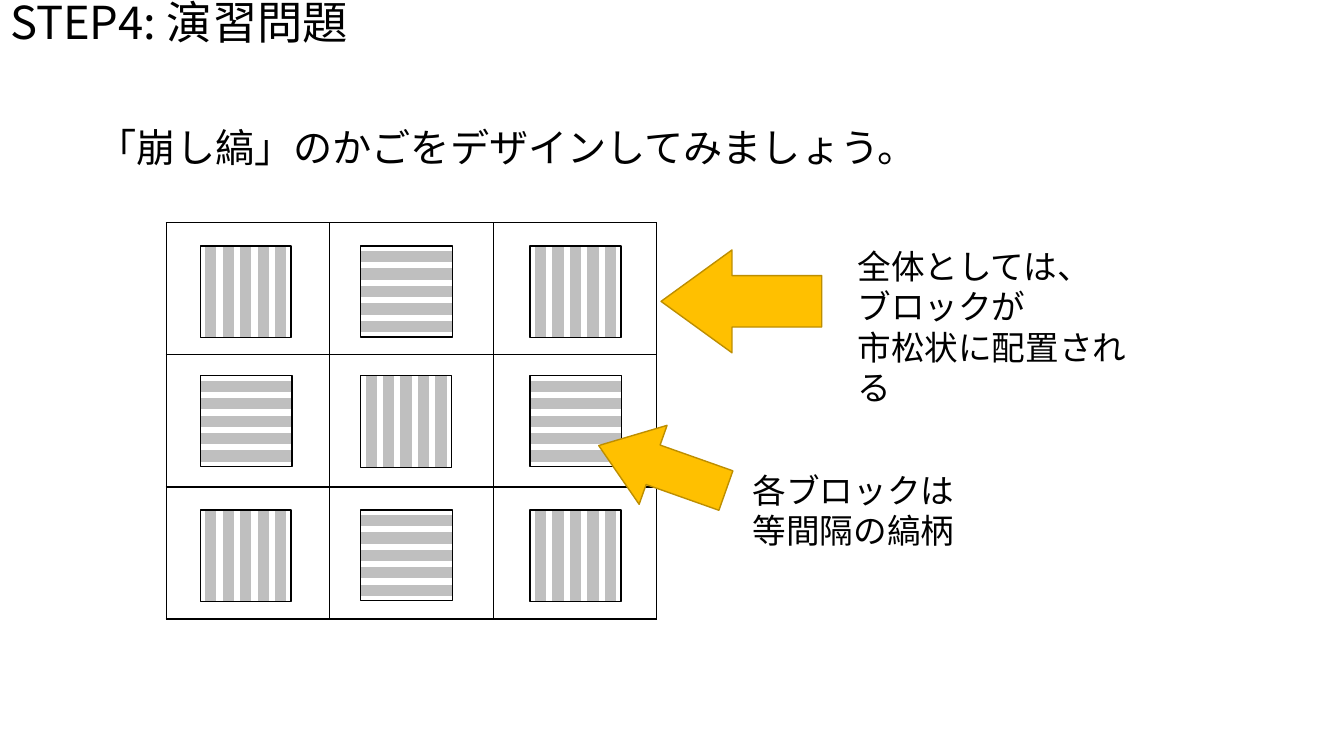
from dataclasses import dataclass

from lxml import etree
from pptx import Presentation
from pptx import util as u
from pptx.dml import color
from pptx.enum import shapes, text
from pptx.oxml import ns


@dataclass(frozen=True)
class Theme:
    black: str = "000000"
    gray: str = "BFBFBF"
    gold: str = "FFC000"
    edge: str = "BD8E00"
    latin: str = "Calibri"
    asian: str = "Noto Sans CJK JP"
    title: float = 32.4
    lead: float = 28
    note: float = 24
    line: float = 1


@dataclass(frozen=True)
class Box:
    left: float
    top: float
    width: float
    height: float
    turn: float = 0


@dataclass(frozen=True)
class Note:
    box: Box
    words: str
    arrow: Box


THEME = Theme()
GRID = Box(4.19, 5.61, 12.36, 9.99)
LEFTS = (5.05, 9.09, 13.36)
TOPS = (6.2, 9.47, 12.85)
WIDE, TALL = 2.29, 2.31
COUNT, PITCH, BAR, INSET = 5, 0.44, 0.25, 0.14
NOTES = (
    Note(Box(21.36, 6.07, 7.85, 3.33), "全体としては、\nブロックが\n市松状に配置される",
         Box(16.66, 6.3, 4.05, 2.59)),
    Note(Box(18.72, 11.71, 5.65, 2.31), "各ブロックは\n等間隔の縞柄",
         Box(14.99, 10.74, 3.4, 2.11, 19.5)),
)


def rgb(code: str) -> color.RGBColor:
    return color.RGBColor.from_string(code)


def place(item, box: Box) -> None:
    item.left, item.top = u.Cm(box.left), u.Cm(box.top)
    item.width, item.height = u.Cm(box.width), u.Cm(box.height)


def write(frame, words: str, size: float, face: str) -> None:
    frame.text = words
    frame.word_wrap = True
    frame.auto_size = text.MSO_AUTO_SIZE.NONE
    for para in frame.paragraphs:
        para.alignment = text.PP_ALIGN.LEFT
        for run in para.runs:
            run.font.size = u.Pt(size)
            run.font.name = face
            run.font.color.rgb = rgb(THEME.black)
            east = etree.SubElement(run.font._element, ns.qn("a:ea"))
            east.set("typeface", THEME.asian)


def draw(slide, kind, box: Box, fill: str | None, line: str):
    item = slide.shapes.add_shape(kind, 0, 0, 0, 0)
    place(item, box)
    item.rotation = box.turn
    item.shadow.inherit = False
    if fill:
        item.fill.solid()
        item.fill.fore_color.rgb = rgb(fill)
    else:
        item.fill.background()
    item.line.color.rgb = rgb(line)
    item.line.width = u.Pt(THEME.line)
    return item


def edge(cell) -> None:
    cell.fill.background()
    props = cell._tc.get_or_add_tcPr()
    for spot, side in enumerate(("L", "R", "T", "B")):
        line = etree.Element(ns.qn(f"a:ln{side}"), w=str(u.Pt(THEME.line)))
        fill = etree.SubElement(line, ns.qn("a:solidFill"))
        etree.SubElement(fill, ns.qn("a:srgbClr"), val=THEME.black)
        props.insert(spot, line)


def block(slide, left: float, top: float, flat: bool) -> None:
    def rect(x: float, y: float, width: float, fill: str | None, line: str) -> None:
        box = Box(x - width / 2, y - TALL / 2, width, TALL, 90 if flat else 0)
        draw(slide, shapes.MSO_SHAPE.RECTANGLE, box, fill, line)

    def spot(step: float) -> tuple[float, float]:
        half = TALL / 2
        return (left + half, top + step) if flat else (left + step, top + half)

    for i in range(COUNT):
        rect(*spot(INSET + BAR / 2 + i * PITCH), BAR, THEME.gray, THEME.gray)
    rect(*spot(WIDE / 2), WIDE, None, THEME.black)


def main() -> None:
    deck = Presentation()
    deck.slide_width, deck.slide_height = u.Cm(33.87), u.Cm(19.05)
    slide = deck.slides.add_slide(deck.slide_layouts[1])

    # Title and lead sentence
    title, body = slide.placeholders
    place(title, Box(0, 0, 29.21, 1.27))
    write(title.text_frame, "STEP4: 演習問題", THEME.title, THEME.asian)
    title.text_frame.vertical_anchor = text.MSO_ANCHOR.MIDDLE
    place(body, Box(2.21, 3.12, 26.87, 12.09))
    write(body.text_frame, "「崩し縞」のかごをデザインしてみましょう。", THEME.lead, THEME.latin)
    lead = body.text_frame.paragraphs[0]
    lead.space_before = u.Pt(10)
    props = lead._p.get_or_add_pPr()
    props.set("marL", "0")
    props.set("indent", "0")
    etree.SubElement(props, ns.qn("a:buNone"))
    for para in (title.text_frame.paragraphs[0], lead):
        para.line_spacing = 0.9

    # Grid
    holder = slide.shapes.add_table(len(TOPS), len(LEFTS), 0, 0,
                                    u.Cm(GRID.width), u.Cm(GRID.height))
    holder.left, holder.top = u.Cm(GRID.left), u.Cm(GRID.top)
    table = holder.table
    table.first_row = table.horz_banding = False
    for cell in table.iter_cells():
        edge(cell)

    # Checkerboard of striped blocks
    for row, top in enumerate(TOPS):
        for col, left in enumerate(LEFTS):
            block(slide, left, top, (row + col) % 2 == 1)

    # Notes with arrows
    for note in NOTES:
        arrow = draw(slide, shapes.MSO_SHAPE.LEFT_ARROW, note.arrow,
                     THEME.gold, THEME.edge)
        arrow.adjustments[0], arrow.adjustments[1] = 0.5, 0.69
        label = slide.shapes.add_textbox(0, 0, 0, 0)
        place(label, note.box)
        write(label.text_frame, note.words, THEME.note, THEME.latin)

    deck.save("out.pptx")


if __name__ == "__main__":
    main()
